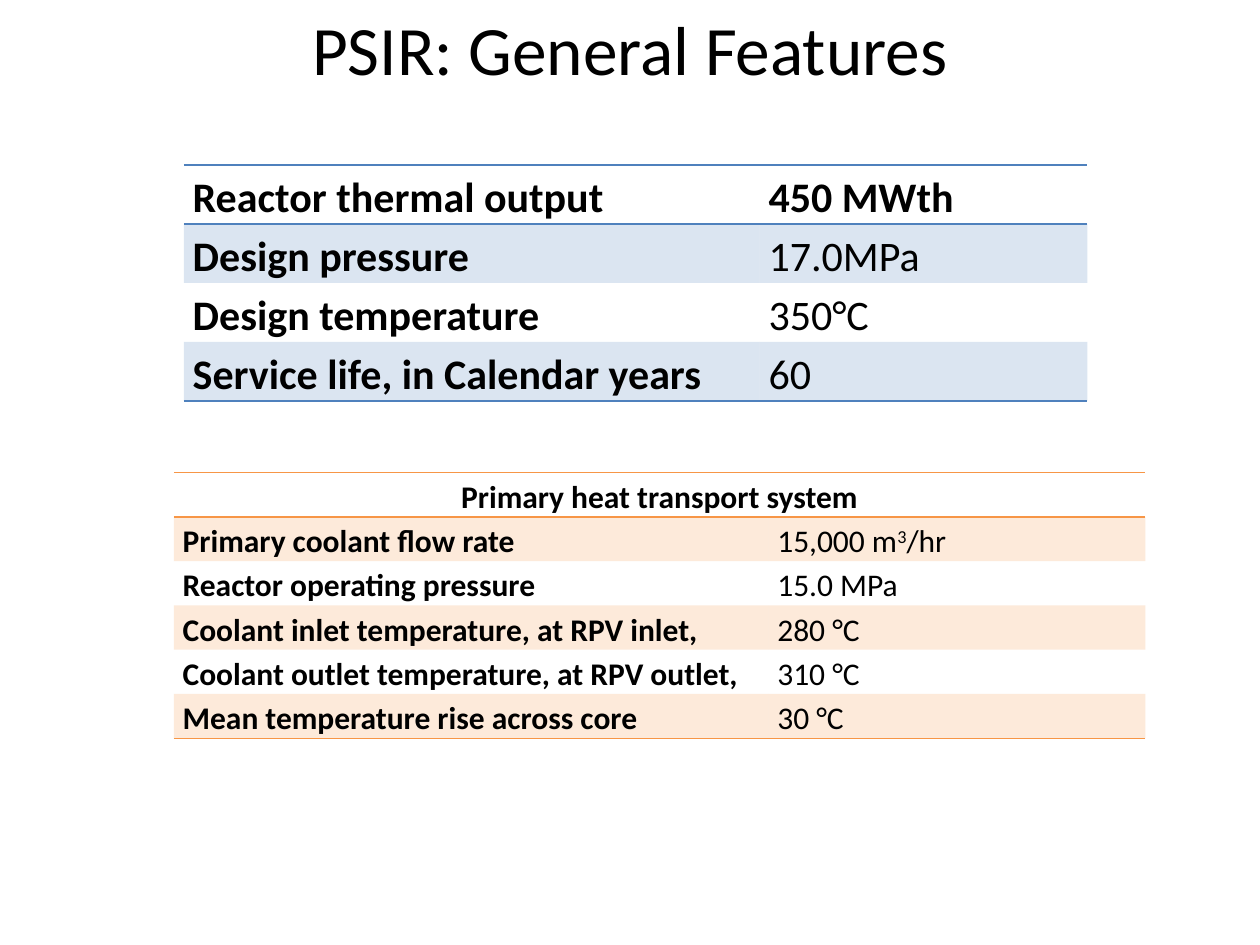
import pptx
import pptx.util
import pptx.dml.color
import pptx.enum.text
import pptx.oxml
import pptx.oxml.ns

Inches = pptx.util.Inches
PLAIN = "{2D5ABB26-0587-4C30-8999-92F81FD0307C}"
BLUE = "4F81BD"
ORANGE = "F79646"
BLACK = "000000"

DESIGN = [
    ("Reactor thermal output", ["450 MWth"]),
    ("Design pressure", ["17.0MPa"]),
    ("Design temperature", ["350°C"]),
    ("Service life, in Calendar years", ["60"]),
]
COOLANT = [
    ("Primary heat transport system", []),
    ("Primary coolant flow rate", ["15,000 m", "3", "/hr"]),
    ("Reactor operating pressure", ["15.0 MPa"]),
    ("Coolant inlet temperature, at RPV inlet,", ["280 °C"]),
    ("Coolant outlet temperature, at RPV outlet,", ["310 °C"]),
    ("Mean temperature rise across core", ["30 °C"]),
]


def color(code):
    return pptx.dml.color.RGBColor.from_string(code)


def add_run(para, text, size, bold=False, raised=False):
    run = para.add_run()
    run.text = text
    run.font.name = "Calibri"
    run.font.size = pptx.util.Pt(size)
    run.font.bold = bold
    run.font.color.rgb = color(BLACK)
    if raised:
        run.font._element.set("baseline", "30000")


def add_title(slide, box, text):
    title = slide.shapes.title
    title.left, title.top, title.width, title.height = map(Inches, box)
    frame = title.text_frame
    frame.auto_size = pptx.enum.text.MSO_AUTO_SIZE.NONE
    frame.vertical_anchor = pptx.enum.text.MSO_ANCHOR.MIDDLE
    para = frame.paragraphs[0]
    para.alignment = pptx.enum.text.PP_ALIGN.CENTER
    add_run(para, text, 39.6)


def add_rules(cell, tint, sides):
    props = cell._tc.get_or_add_tcPr()
    for spot, side in enumerate(sides):
        props.insert(spot, pptx.oxml.parse_xml(
            f'<a:ln{side} {pptx.oxml.ns.nsdecls("a")} w="12700">'
            f'<a:solidFill><a:srgbClr val="{tint}"/></a:solidFill></a:ln{side}>'))


def fill_cell(cell, tint, banded):
    if not banded:
        cell.fill.background()
        return
    cell.fill.solid()
    cell.fill.fore_color.rgb = color(tint)
    shade = cell._tc.tcPr.find(".//" + pptx.oxml.ns.qn("a:srgbClr"))
    shade.append(pptx.oxml.parse_xml(
        f'<a:alpha {pptx.oxml.ns.nsdecls("a")} val="20000"/>'))


def add_grid(slide, box, data, widths, size, tint):
    left, top, width, height = map(Inches, box)
    table = slide.shapes.add_table(len(data), 2, left, top, width, height).table
    table._tbl.tblPr.find(pptx.oxml.ns.qn("a:tableStyleId")).text = PLAIN
    for col, span in zip(table.columns, widths):
        col.width = Inches(span)
    for row, (label, value) in enumerate(data):
        table.rows[row].height = height // len(data)
        sides = "TB" if row == 0 else "B" if row == len(data) - 1 else ""
        for col, parts in enumerate(([label], value)):
            cell = table.cell(row, col)
            cell.margin_left = cell.margin_right = Inches(0.07)
            cell.margin_top = cell.margin_bottom = 0
            para = cell.text_frame.paragraphs[0]
            para.line_spacing = 1.15
            for spot, text in enumerate(parts):
                add_run(para, text, size, row == 0 or col == 0, spot == 1)
            fill_cell(cell, tint, row % 2 == 1)
            add_rules(cell, tint, sides)
        if not value:
            head = table.cell(row, 0)
            head.merge(table.cell(row, 1))
            head.text_frame.paragraphs[0].alignment = pptx.enum.text.PP_ALIGN.CENTER


def main():
    deck = pptx.Presentation()
    deck.slide_width, deck.slide_height = Inches(10), Inches(7.5)
    slide = deck.slides.add_slide(deck.slide_layouts[5])
    add_title(slide, (0, 0, 10, 0.76), "PSIR: General Features")
    add_grid(slide, (1.46, 1.31, 7.17, 1.87), DESIGN, (4.57, 2.6), 24, BLUE)
    add_grid(slide, (1.38, 3.75, 7.71, 2.11), COOLANT, (4.72, 2.99), 18, ORANGE)
    deck.save("out.pptx")


if __name__ == "__main__":
    main()
